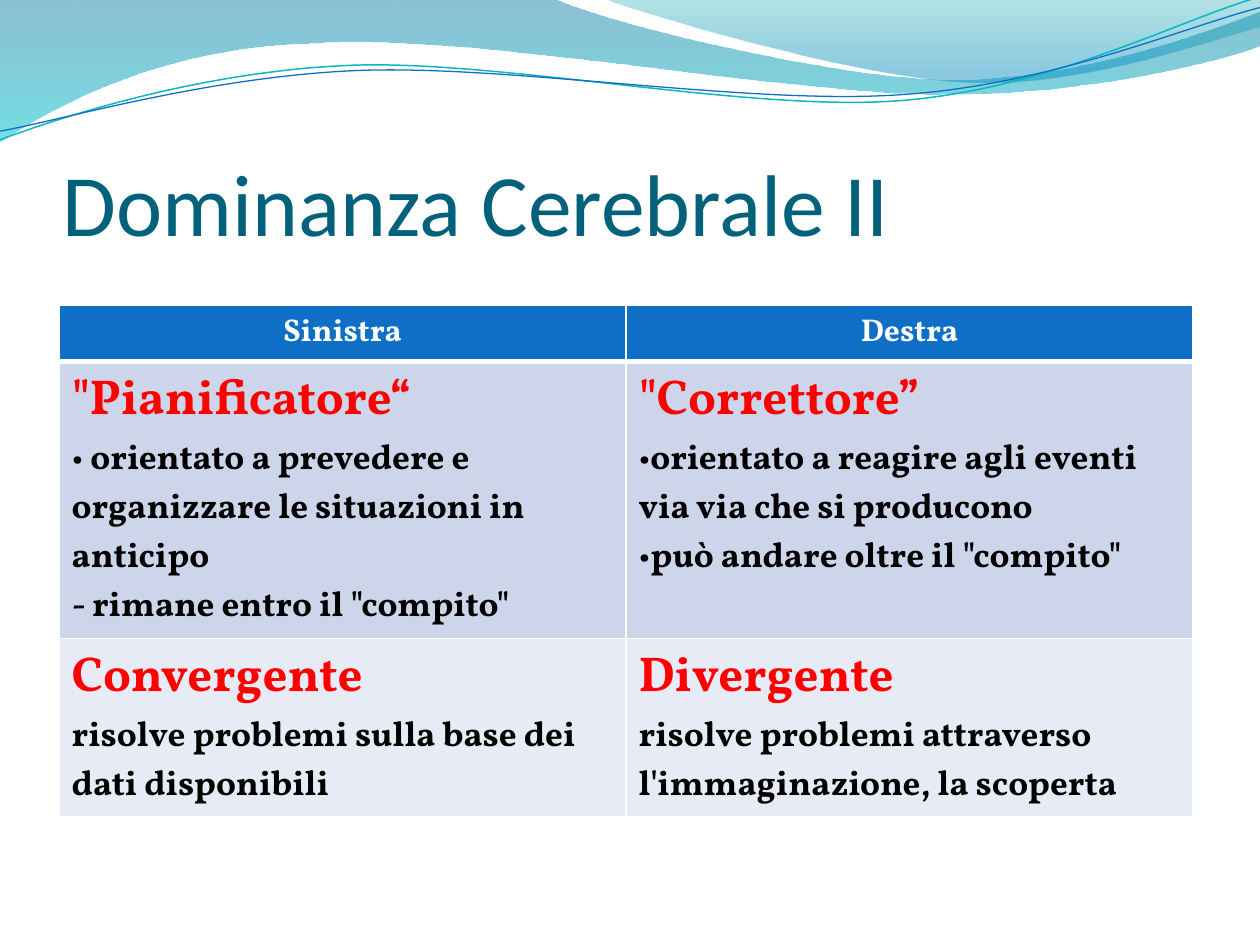
import pptx
import pptx.dml.color
import pptx.enum.text
import pptx.oxml
import pptx.oxml.ns
import pptx.util

Pt = pptx.util.Pt
ALIGN = pptx.enum.text.PP_ALIGN
ANCHOR = pptx.enum.text.MSO_ANCHOR

COLORS = {
    "title": "04617B", "white": "FFFFFF", "black": "000000", "heading": "FF0000",
    "header": "0F6FC6", "band_dark": "CCD5EA", "band_light": "E7EBF5",
    "wave_top": "0074A1", "wave_bottom": "00C6CF",
    "crest_top": "00A1A9", "crest_bottom": "008BBF",
    "teal_line": "0AB8BF", "blue_line": "0F6FC6",
}
BODY_FONT = "Vollkorn"
UNITS_PER_POINT = 10

# A segment holds one point (straight) or three points (cubic curve).
WAVE = [
    [(316.8, -0.7)],
    [(342.7, 12.2), (478.1, 45.4), (545.8, 45.4)],
    [(614.2, 45.4), (689.8, 18.7), (720, 6.5)],
    [(720.7, 25.9)],
    [(707.8, 31.7), (626.4, 54.7), (537.1, 54)],
    [(447.8, 54), (275, 20.2), (185, 24.5)],
    [(92.9, 25.9), (33.1, 59.8), (-0.7, 81.4)],
]
CREST = [
    [(366.5, 7.9), (491, 44.6), (553.7, 46.8)],
    [(616.3, 49.7), (691.9, 23), (720, 15.1)],
    [(720, 0)],
]
TEAL_LINE = [
    [(34.6, 67), (113.8, 41), (199.4, 37.4)],
    [(284.4, 33.8), (427, 64.1), (513.4, 57.6)],
    [(599.8, 51.1), (675.4, 10.8), (718.6, -1.4)],
]
BLUE_LINE = [
    [(33.8, 69.1), (118.1, 43.9), (203.8, 40.3)],
    [(290.2, 36.7), (429.8, 60.5), (516.2, 54)],
    [(601.9, 48.2), (677.5, 15.1), (720, 4.3)],
]

HEADERS = ["Sinistra", "Destra"]
# Each cell: heading, then (text, has bullet) lines.
ROWS = [
    [
        ('"Pianificatore“', [
            (" orientato a prevedere e organizzare le situazioni in anticipo", True),
            ('- rimane entro il "compito"', False),
        ]),
        ('"Correttore”', [
            ("orientato a reagire agli eventi via via che si producono", True),
            ('può andare oltre il "compito"', True),
        ]),
    ],
    [
        ("Convergente", [("risolve problemi sulla base dei dati disponibili", False)]),
        ("Divergente", [("risolve problemi attraverso l'immaginazione, la scoperta", False)]),
    ],
]
ROW_HEIGHTS = [32, 158.5, 101.5]


def rgb(name):
    return pptx.dml.color.RGBColor.from_string(COLORS[name])


def add_outline(slide, start, segments, close):
    """Build straight steps through all points, then turn each triple into a curve."""
    points = [(x * UNITS_PER_POINT, y * UNITS_PER_POINT)
              for x, y in [start] + [point for segment in segments for point in segment]]
    builder = slide.shapes.build_freeform(*points[0], scale=Pt(1) / UNITS_PER_POINT)
    builder.add_line_segments(points[1:], close=close)
    shape = builder.convert_to_shape()
    shape.shadow.inherit = False
    steps = iter(list(shape.element.spPr.iter(pptx.oxml.ns.qn("a:lnTo"))))
    for segment in segments:
        segment_steps = [next(steps) for _ in segment]
        if len(segment) == 3:
            curve = pptx.oxml.parse_xml(f'<a:cubicBezTo {pptx.oxml.ns.nsdecls("a")}/>')
            segment_steps[0].addprevious(curve)
            for step in segment_steps:
                curve.append(step[0])
                step.getparent().remove(step)
    return shape


def add_gradient_area(slide, start, segments, stops):
    """Fill from top to bottom; each stop is (position, colour, opacity in percent)."""
    shape = add_outline(slide, start, segments, close=True)
    shape.line.fill.background()
    shape.fill.gradient()
    shape.fill.gradient_angle = 270
    for stop, (position, color, _) in zip(shape.fill.gradient_stops, stops):
        stop.position = position
        stop.color.rgb = rgb(color)
    color_elements = shape.element.spPr.iter(pptx.oxml.ns.qn("a:srgbClr"))
    for element, (_, _, opacity) in zip(color_elements, stops):
        element.append(pptx.oxml.parse_xml(
            f'<a:alpha {pptx.oxml.ns.nsdecls("a")} val="{opacity * 1000}"/>'))


def add_wave_line(slide, start, segments, color, width):
    shape = add_outline(slide, start, segments, close=False)
    shape.fill.background()
    shape.line.color.rgb = rgb(color)
    shape.line.width = Pt(width)


def write_text(paragraph, text, *, size, color, font=BODY_FONT, bold=True,
               align=ALIGN.LEFT, bullet=False):
    run = paragraph.add_run()
    run.text = text
    run.font.name = font
    run.font.size = Pt(size)
    run.font.bold = bold
    run.font.color.rgb = rgb(color)
    paragraph.alignment = align
    if bullet:
        properties = paragraph._p.get_or_add_pPr()
        properties.set("marL", "0")
        properties.set("indent", "0")
        for tag, attribute in (("buFont", f'typeface="{font}"'), ("buChar", 'char="•"')):
            properties.append(pptx.oxml.parse_xml(
                f'<a:{tag} {pptx.oxml.ns.nsdecls("a")} {attribute}/>'))


def add_title(slide, text):
    box = slide.shapes.add_textbox(Pt(36), Pt(55.2), Pt(648), Pt(90))
    frame = box.text_frame
    frame.word_wrap = True
    frame.vertical_anchor = ANCHOR.BOTTOM
    frame.margin_left = frame.margin_right = frame.margin_bottom = 0
    frame.margin_top = Pt(3.6)
    write_text(frame.paragraphs[0], text, size=50, color="title", font="Calibri", bold=False)


def style_cell(cell, fill, top=1, bottom=1):
    cell.fill.solid()
    cell.fill.fore_color.rgb = rgb(fill)
    properties = cell._tc.get_or_add_tcPr()
    for index, (side, width) in enumerate(zip("LRTB", (1, 1, top, bottom))):
        properties.insert(index, pptx.oxml.parse_xml(
            f'<a:ln{side} {pptx.oxml.ns.nsdecls("a")} w="{Pt(width)}"><a:solidFill>'
            f'<a:srgbClr val="{COLORS["white"]}"/></a:solidFill></a:ln{side}>'))


def add_comparison_table(slide):
    frame = slide.shapes.add_table(len(ROWS) + 1, len(HEADERS), Pt(33.75), Pt(174.5),
                                   Pt(648), Pt(sum(ROW_HEIGHTS)))
    table = frame.table
    table.horz_banding = False
    for row, height in zip(table.rows, ROW_HEIGHTS):
        row.height = Pt(height)

    for column, header in enumerate(HEADERS):
        cell = table.cell(0, column)
        style_cell(cell, "header", bottom=3)
        cell.vertical_anchor = ANCHOR.MIDDLE
        write_text(cell.text_frame.paragraphs[0], header, size=18, color="white",
                   align=ALIGN.CENTER)

    for row, (contents, fill) in enumerate(zip(ROWS, ("band_dark", "band_light")), 1):
        for column, (heading, lines) in enumerate(contents):
            cell = table.cell(row, column)
            style_cell(cell, fill, top=3 if row == 1 else 1)
            write_text(cell.text_frame.paragraphs[0], heading, size=28, color="heading")
            for text, bullet in lines:
                write_text(cell.text_frame.add_paragraph(), text, size=20, color="black",
                           bullet=bullet)


def main():
    presentation = pptx.Presentation()
    presentation.slide_width, presentation.slide_height = Pt(720), Pt(540)
    slide = presentation.slides.add_slide(presentation.slide_layouts[6])
    add_gradient_area(slide, (0, 0), WAVE, [(0, "wave_top", 45), (1, "wave_bottom", 55)])
    add_gradient_area(slide, (344.9, -0.7), CREST,
                      [(0, "crest_top", 30), (0.8, "crest_bottom", 45)])
    add_wave_line(slide, (0, 79.9), TEAL_LINE, "teal_line", 0.85)
    add_wave_line(slide, (0, 74.9), BLUE_LINE, "blue_line", 0.75)
    add_title(slide, "Dominanza Cerebrale II")
    add_comparison_table(slide)
    presentation.save("out.pptx")


if __name__ == "__main__":
    main()
